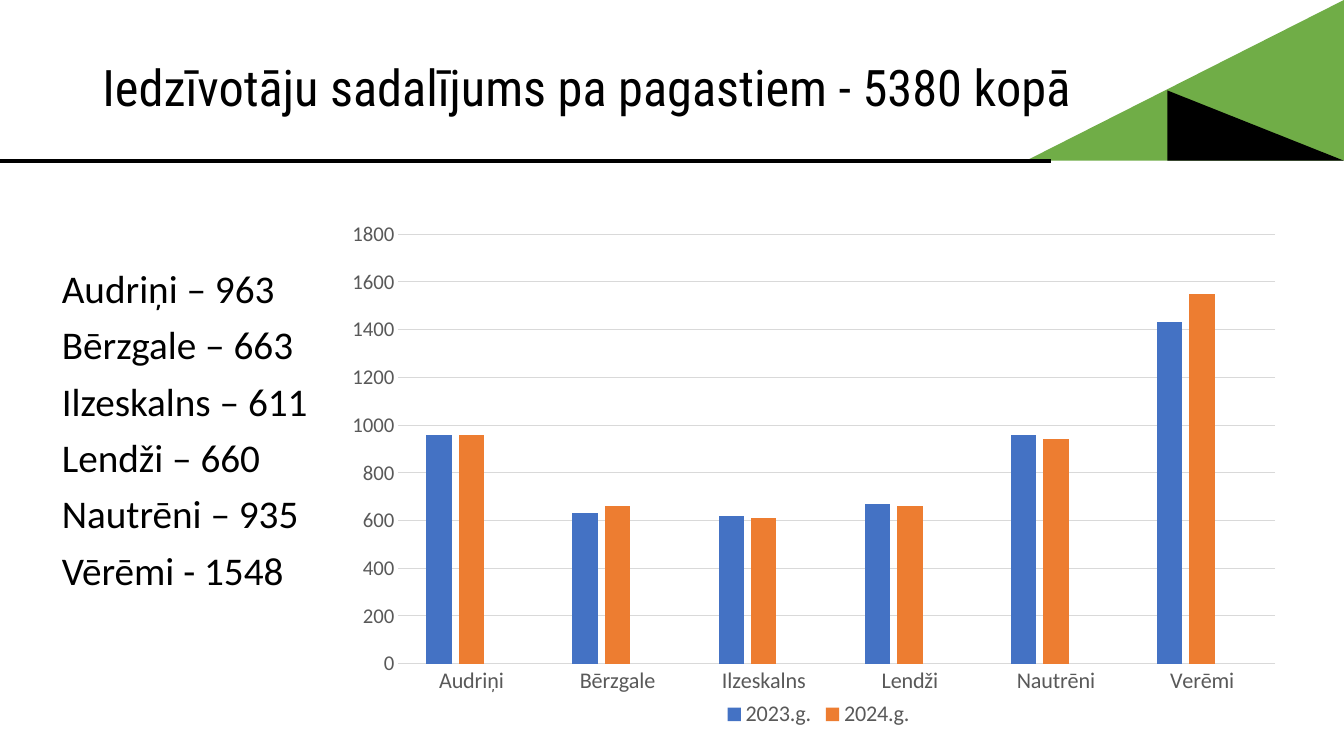
from lxml.etree import SubElement
from pptx import Presentation
from pptx.chart.data import CategoryChartData
from pptx.dml.color import RGBColor
from pptx.enum.chart import XL_CHART_TYPE as ChartType
from pptx.enum.chart import XL_LEGEND_POSITION as LegendPosition
from pptx.enum.chart import XL_TICK_MARK as TickMark
from pptx.enum.shapes import MSO_CONNECTOR as Connector
from pptx.enum.shapes import MSO_SHAPE as Shape
from pptx.enum.text import MSO_ANCHOR as Anchor
from pptx.oxml import parse_xml
from pptx.oxml.ns import nsdecls, qn
from pptx.util import Cm, Pt

GREEN, BLACK, GREY, GRID = "70AD47", "000000", "595959", "D9D9D9"
HEADER_HEIGHT = 4.05
TITLE = "Iedzīvotāju sadalījums pa pagastiem - 5380 kopā"
POPULATION = ["Audriņi – 963", "Bērzgale – 663", "Ilzeskalns – 611",
              "Lendži – 660", "Nautrēni – 935", "Vērēmi - 1548"]
PARISHES = ["Audriņi", "Bērzgale", "Ilzeskalns", "Lendži", "Nautrēni", "Verēmi"]
# The empty third series reserves room to the right of each pair of columns.
SERIES = [("2023.g.", [960, 630, 620, 670, 960, 1430], "4472C4"),
          ("2024.g.", [960, 660, 610, 660, 940, 1550], "ED7D31"),
          ("Series 3", [None] * 6, "A5A5A5")]


def color(hex_text):
    return RGBColor.from_string(hex_text)


def style_font(font, size, hex_text, name="Calibri"):
    font.size, font.name = Pt(size), name
    font.color.rgb = color(hex_text)


def style_line(line, width, hex_text):
    line.width = Pt(width)
    line.color.rgb = color(hex_text)


def add_text(page, left, top, width, height, lines, size, name, anchor):
    """Place one paragraph per line in a wrapping text box."""
    frame = page.shapes.add_textbox(Cm(left), Cm(top), Cm(width), Cm(height)).text_frame
    frame.word_wrap = True
    frame.vertical_anchor = anchor
    frame.text = "\n".join(lines)
    for index, para in enumerate(frame.paragraphs):
        para.line_spacing = 0.9
        para.space_before = Pt(10 if index else 0)
        style_font(para.runs[0].font, size, BLACK, name)


def add_triangle(page, left, top, width, height, fill, mirrored=False):
    triangle = page.shapes.add_shape(
        Shape.RIGHT_TRIANGLE, Cm(left), Cm(top), Cm(width), Cm(height))
    triangle.shadow.inherit = False
    triangle.fill.solid()
    triangle.fill.fore_color.rgb = color(fill)
    triangle.line.fill.background()
    if mirrored:
        triangle.element.spPr.find(qn("a:xfrm")).set("flipH", "1")


def add_header(page, width, height):
    """Draw the title, the corner triangles and the rule across the slide top."""
    add_text(page, 2.33, 0.58, width - 4.66, 3.4, [TITLE], 36,
             "Roboto Condensed", Anchor.MIDDLE)
    add_triangle(page, width - 8.01, 0, 8.01, height, GREEN, mirrored=True)
    add_triangle(page, width - 4.45, height - 1.77, 4.45, 1.77, BLACK)
    rule = page.shapes.add_connector(
        Connector.STRAIGHT, Cm(0), Cm(height), Cm(width - 7.38), Cm(height))
    style_line(rule.line, 3, BLACK)
    SubElement(rule.element.spPr, qn("a:effectLst"))


def style_axes(chart):
    categories, values = chart.category_axis, chart.value_axis
    for axis, size in ((categories, 16), (values, 15)):
        axis.major_tick_mark = axis.minor_tick_mark = TickMark.NONE
        style_font(axis.tick_labels.font, size, GREY)
    style_line(categories.format.line, 0.75, GRID)
    values.format.line.fill.background()
    values.minimum_scale, values.maximum_scale, values.major_unit = 0, 1800, 200
    values.has_major_gridlines = True
    style_line(values.major_gridlines.format.line, 0.75, GRID)


def add_legend(chart, hidden_entry):
    chart.has_legend = True
    legend = chart.legend
    legend.position = LegendPosition.BOTTOM
    legend.include_in_layout = False
    style_font(legend.font, 16, GREY)
    chart.element.find(".//" + qn("c:legendPos")).addnext(parse_xml(
        f'<c:legendEntry {nsdecls("c")}><c:idx val="{hidden_entry}"/>'
        '<c:delete val="1"/></c:legendEntry>'))


def set_plot_layout(chart, x, y, w, h):
    """Fix the inner plot area as fractions of the chart."""
    plot_area = chart.element.find(".//" + qn("c:plotArea"))
    for layout in plot_area.findall(qn("c:layout")):
        plot_area.remove(layout)
    sizes = "".join(f'<c:{key} val="{value}"/>'
                    for key, value in (("x", x), ("y", y), ("w", w), ("h", h)))
    plot_area.insert(0, parse_xml(
        f'<c:layout {nsdecls("c")}><c:manualLayout><c:layoutTarget val="inner"/>'
        f'<c:xMode val="edge"/><c:yMode val="edge"/>{sizes}'
        '</c:manualLayout></c:layout>'))


def add_population_chart(page, left, top, width, height):
    data = CategoryChartData()
    data.categories = PARISHES
    for name, values, _ in SERIES:
        data.add_series(name, values)
    chart = page.shapes.add_chart(ChartType.COLUMN_CLUSTERED, Cm(left), Cm(top),
                                  Cm(width), Cm(height), data).chart
    chart.has_title = False
    style_font(chart.font, 10, BLACK)
    plot = chart.plots[0]
    plot.vary_by_categories = False
    plot.gap_width, plot.overlap = 219, -27
    for series, (_, _, fill) in zip(plot.series, SERIES):
        series.format.fill.solid()
        series.format.fill.fore_color.rgb = color(fill)
    style_axes(chart)
    add_legend(chart, hidden_entry=2)
    set_plot_layout(chart, 0.04, 0.06, 0.96, 0.81)


def main():
    deck = Presentation()
    deck.slide_width, deck.slide_height = Cm(33.87), Cm(19.05)
    page = deck.slides.add_slide(deck.slide_layouts[6])
    add_header(page, 33.87, HEADER_HEIGHT)
    add_text(page, 1.31, 6.67, 7.5, 10.5, POPULATION, 28, "Calibri", Anchor.TOP)
    add_population_chart(page, 8.88, 5.1, 23.27, 13.36)
    deck.save("out.pptx")


if __name__ == "__main__":
    main()
